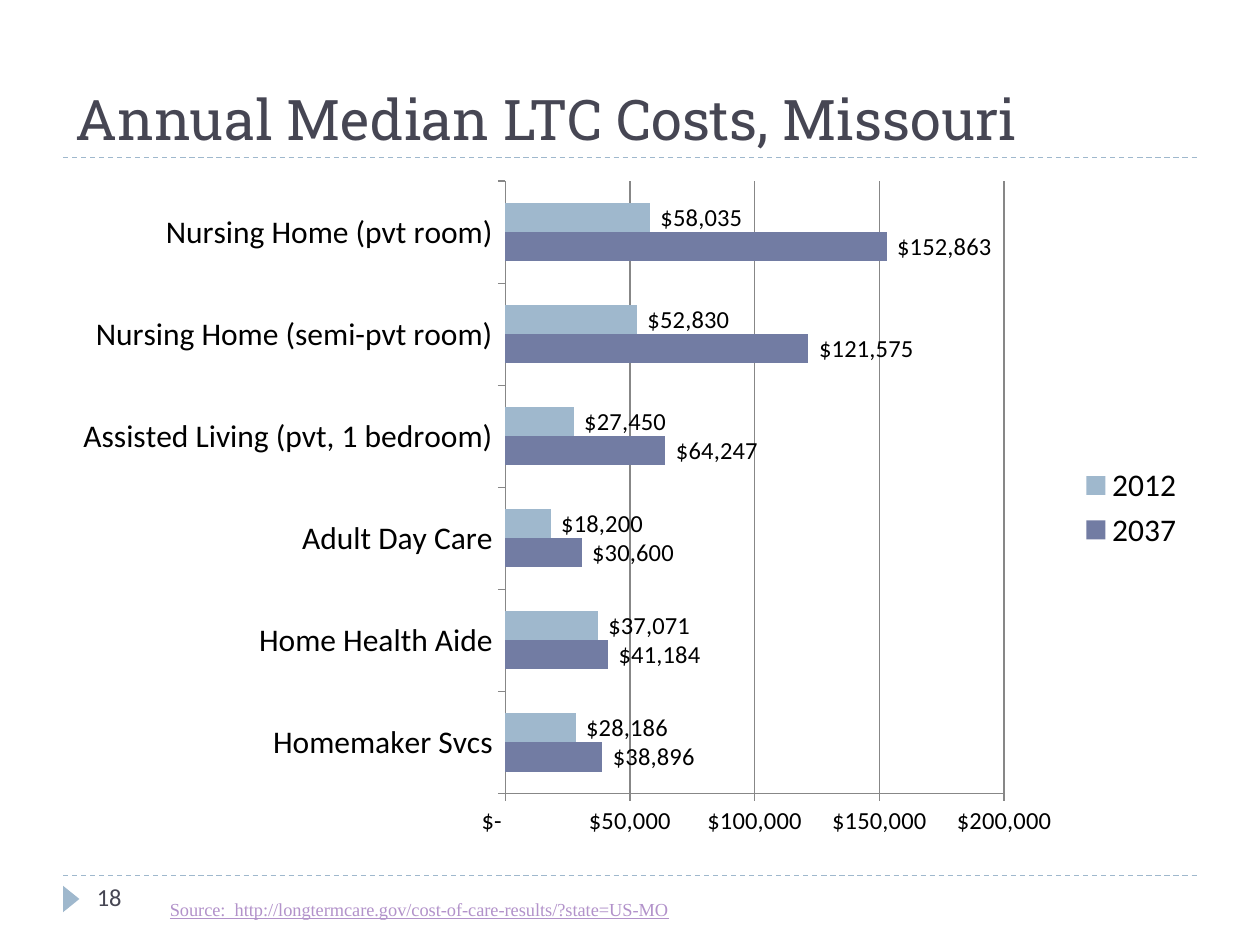
import lxml.etree
import pptx
import pptx.chart.data
import pptx.dml.color
import pptx.enum.chart
import pptx.enum.dml
import pptx.enum.shapes
import pptx.enum.text
import pptx.oxml.ns
import pptx.util

Inches = pptx.util.Inches

COLORS = {
    "title": "464653", "light": "9FB8CD", "dark": "727CA3",
    "link": "B292CA", "text": "000000", "axis": "878787",
}
TITLE = "Annual Median LTC Costs, Missouri"
SOURCE = "Source:  http://longtermcare.gov/cost-of-care-results/?state=US-MO"
PAGE = "18"
COSTS = [
    ("Homemaker Svcs", 38896, 28186),
    ("Home Health Aide", 41184, 37071),
    ("Adult Day Care", 30600, 18200),
    ("Assisted Living (pvt, 1 bedroom)", 64247, 27450),
    ("Nursing Home (semi-pvt room)", 121575, 52830),
    ("Nursing Home (pvt room)", 152863, 58035),
]
SERIES = [("2037", "dark"), ("2012", "light")]
DOLLARS = '_("$"* #,##0_);_("$"* \\(#,##0\\);_("$"* "-"??_);_(@_)'
RULES = [1.25, 6.95]
PLOT = {"x": 0.39, "y": 0.02, "w": 0.44, "h": 0.9}


def rgb(name):
    return pptx.dml.color.RGBColor.from_string(COLORS[name])


def add_text(slide, text, box, font, size, color, anchor="TOP", underline=None):
    shape = slide.shapes.add_textbox(*map(Inches, box))
    frame = shape.text_frame
    frame.word_wrap = True
    frame.vertical_anchor = getattr(pptx.enum.text.MSO_ANCHOR, anchor)
    run = frame.paragraphs[0].add_run()
    run.text = text
    run.font.name = font
    run.font.size = pptx.util.Pt(size)
    run.font.color.rgb = rgb(color)
    run.font.underline = underline


def add_rule(slide, y):
    rule = slide.shapes.add_connector(
        pptx.enum.shapes.MSO_CONNECTOR.STRAIGHT,
        Inches(0.5), Inches(y), Inches(9.5), Inches(y))
    rule.line.color.rgb = rgb("light")
    rule.line.width = pptx.util.Pt(0.75)
    rule.line.dash_style = pptx.enum.dml.MSO_LINE.DASH
    lxml.etree.SubElement(rule._element.spPr, pptx.oxml.ns.qn("a:effectLst"))


def add_page_marker(slide):
    marker = slide.shapes.add_shape(
        pptx.enum.shapes.MSO_SHAPE.ISOSCELES_TRIANGLE,
        Inches(0.46), Inches(7.07), Inches(0.21), Inches(0.13))
    marker.rotation = 90
    marker.shadow.inherit = False
    marker.fill.solid()
    marker.fill.fore_color.rgb = rgb("light")
    marker.line.fill.background()


def place_plot(chart):
    qn = pptx.oxml.ns.qn
    plot_area = chart._chartSpace.chart.plotArea
    for old in plot_area.findall(qn("c:layout")):
        plot_area.remove(old)
    layout = lxml.etree.Element(qn("c:layout"))
    plot_area.insert(0, layout)
    manual = lxml.etree.SubElement(layout, qn("c:manualLayout"))
    settings = {"layoutTarget": "inner", "xMode": "edge", "yMode": "edge", **PLOT}
    for tag, value in settings.items():
        lxml.etree.SubElement(manual, qn("c:" + tag)).set("val", str(value))


def add_cost_chart(slide):
    data = pptx.chart.data.CategoryChartData(number_format=DOLLARS)
    categories, *columns = zip(*COSTS)
    data.categories = categories
    for (name, _), values in zip(SERIES, columns):
        data.add_series(name, values)
    chart = slide.shapes.add_chart(
        pptx.enum.chart.XL_CHART_TYPE.BAR_CLUSTERED,
        Inches(0.5), Inches(1.33), Inches(9), Inches(5.4), data).chart
    chart.has_title = False
    chart.font.name = "Calibri"
    chart.font.size = pptx.util.Pt(18)
    chart.font.color.rgb = rgb("text")
    chart.has_legend = True
    chart.legend.position = pptx.enum.chart.XL_LEGEND_POSITION.RIGHT
    chart.legend.include_in_layout = False

    value_axis = chart.value_axis
    value_axis.minimum_scale, value_axis.maximum_scale = 0, 200000
    value_axis.major_unit = 50000
    value_axis.has_major_gridlines = True
    value_axis.tick_labels.font.size = pptx.util.Pt(14)
    value_axis.tick_labels.number_format = DOLLARS
    value_axis.tick_labels.number_format_is_linked = False
    for axis in (value_axis, chart.category_axis):
        axis.major_tick_mark = pptx.enum.chart.XL_TICK_MARK.OUTSIDE
        axis.format.line.color.rgb = rgb("axis")
    value_axis.major_gridlines.format.line.color.rgb = rgb("axis")

    plot = chart.plots[0]
    plot.gap_width = 150
    plot.vary_by_categories = False
    for series, (_, color) in zip(plot.series, SERIES):
        series.format.fill.solid()
        series.format.fill.fore_color.rgb = rgb(color)
        labels = series.data_labels
        labels.show_value = True
        labels.number_format = DOLLARS
        labels.number_format_is_linked = False
        labels.position = pptx.enum.chart.XL_LABEL_POSITION.OUTSIDE_END
        labels.font.size = pptx.util.Pt(14)
    place_plot(chart)


def main():
    presentation = pptx.Presentation()
    presentation.slide_width = Inches(10)
    presentation.slide_height = Inches(7.5)
    slide = presentation.slides.add_slide(presentation.slide_layouts[6])
    for y in RULES:
        add_rule(slide, y)
    add_page_marker(slide)
    add_text(slide, TITLE, (0.5, 0.17, 9, 1.08), "Roboto Slab", 32, "title",
             anchor="BOTTOM")
    add_cost_chart(slide)
    add_text(slide, PAGE, (0.67, 6.95, 2.17, 0.4), "Calibri", 14, "title")
    add_text(slide, SOURCE, (1.25, 7.08, 6.83, 0.29), "Times New Roman", 10.5,
             "link", underline=True)
    presentation.save("out.pptx")


if __name__ == "__main__":
    main()
